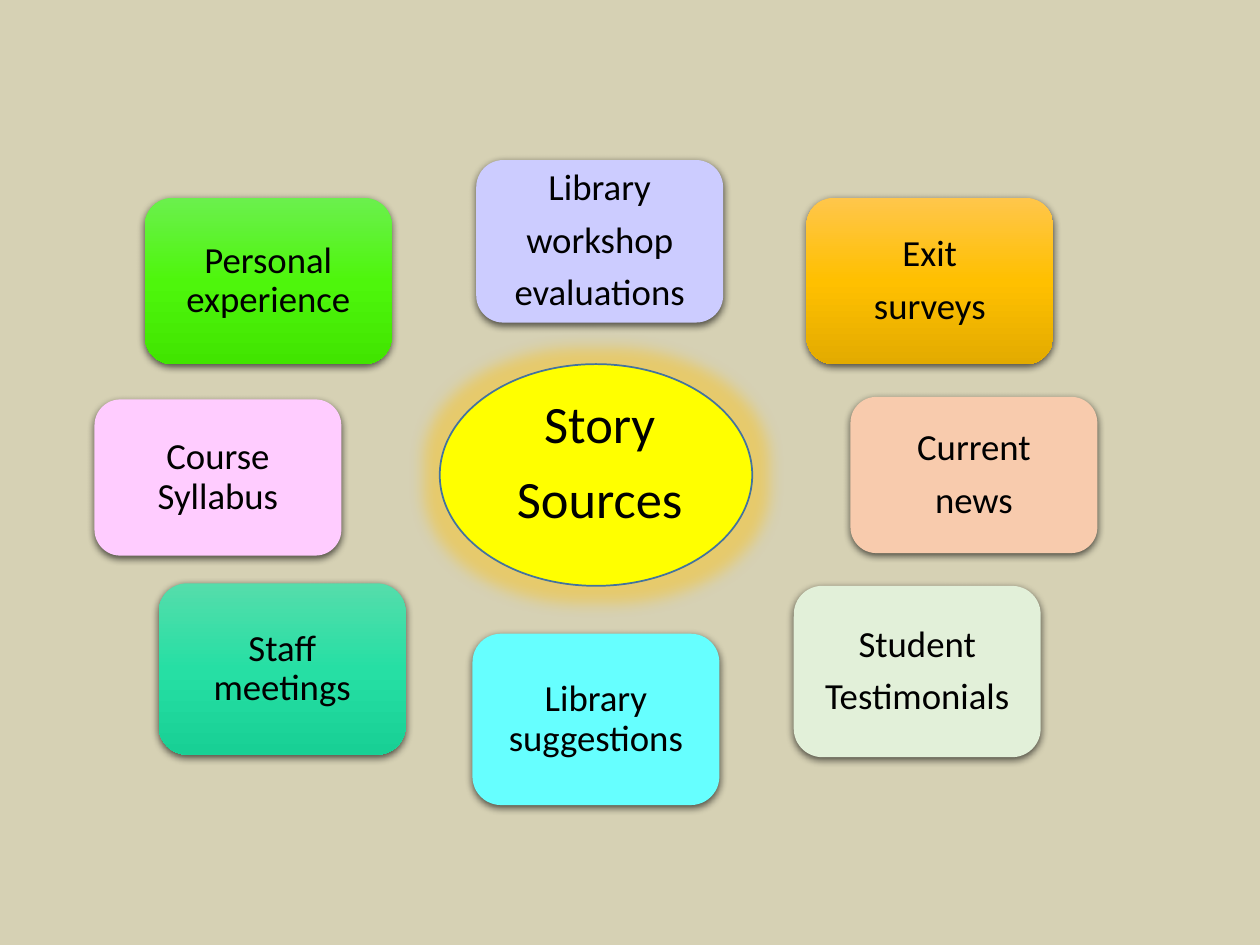
from lxml import etree
from pptx import Presentation
from pptx.dml.color import RGBColor
from pptx.enum.shapes import MSO_SHAPE
from pptx.enum.text import MSO_ANCHOR, PP_ALIGN
from pptx.oxml import parse_xml
from pptx.oxml.ns import nsdecls, qn
from pptx.util import Inches, Pt

ROUND, OVAL = MSO_SHAPE.ROUNDED_RECTANGLE, MSO_SHAPE.OVAL
MIDDLE, CENTER = MSO_ANCHOR.MIDDLE, PP_ALIGN.CENTER

SAND = RGBColor(0xD6, 0xD1, 0xB4)
BLACK = RGBColor(0, 0, 0)
YELLOW = RGBColor(0xFF, 0xFF, 0)
BLUE = RGBColor(0x43, 0x73, 0x9E)
LILAC = RGBColor(0xCC, 0xCC, 0xFF)
CYAN = RGBColor(0x66, 0xFF, 0xFF)
PEACH = RGBColor(0xF8, 0xCB, 0xAD)
PINK = RGBColor(0xFF, 0xCC, 0xFF)
PALE = RGBColor(0xE2, 0xF0, 0xD9)
# Three shades each, from top to bottom
GREEN = [RGBColor.from_string(c) for c in ("6BF04D", "4EF60C", "41E500")]
AMBER = [RGBColor.from_string(c) for c in ("FFC64B", "FFC000", "E3AB00")]
TEAL = [RGBColor.from_string(c) for c in ("55DDAB", "26DFA4", "18D095")]

SHADOW = (f'<a:outerShdw {nsdecls("a")} blurRad="57150" dist="19050" dir="5400000" '
          'algn="ctr" rotWithShape="0"><a:srgbClr val="000000">'
          '<a:alpha val="63000"/></a:srgbClr></a:outerShdw>')
GLOW = (f'<a:glow {nsdecls("a")} rad="228600"><a:srgbClr val="FFC000">'
        '<a:alpha val="40000"/></a:srgbClr></a:glow>')

BOX_W = 1.96


def add_shape(kind, left, top, width, height, color, effect):
    """Add a shape with a plain or three-shade fill and one effect."""
    shape = slide.shapes.add_shape(
        kind, Inches(left), Inches(top), Inches(width), Inches(height))
    if isinstance(color, list):
        shape.fill.gradient()
        stops = shape._element.spPr.find(qn("a:gradFill")).find(qn("a:gsLst"))
        for stop in list(stops):
            stops.remove(stop)
        for pos, shade in zip((0, 50000, 100000), color):
            stop = etree.SubElement(stops, qn("a:gs"), pos=str(pos))
            etree.SubElement(stop, qn("a:srgbClr"), val=str(shade))
        shape.fill.gradient_angle = 270
    else:
        shape.fill.solid()
        shape.fill.fore_color.rgb = color
    shape.line.fill.background()
    shape.shadow.inherit = False
    shape._element.spPr.find(qn("a:effectLst")).append(parse_xml(effect))
    return shape


def set_text(shape, text, size):
    frame = shape.text_frame
    frame.text = text
    frame.word_wrap = True
    frame.vertical_anchor = MIDDLE
    frame.margin_left = frame.margin_right = Inches(0.1)
    frame.margin_top = frame.margin_bottom = 0
    for para in frame.paragraphs:
        para.alignment = CENTER
        para.line_spacing = 0.9
        para.space_after = Pt(0.35 * size)
        for run in para.runs:
            run.font.name = "Calibri"
            run.font.size = Pt(size)
            run.font.color.rgb = BLACK


prs = Presentation()
prs.slide_width, prs.slide_height = Inches(10), Inches(7.5)
slide = prs.slides.add_slide(prs.slide_layouts[6])
slide.background.fill.solid()
slide.background.fill.fore_color.rgb = SAND

# Hub
hub = add_shape(OVAL, 3.49, 2.89, 2.48, 1.76, YELLOW, GLOW)
hub.line.color.rgb = BLUE
hub.line.width = Pt(1)
label = slide.shapes.add_textbox(
    Inches(3.89), Inches(2.91), Inches(1.74), Inches(1.54))
set_text(label, "Story\nSources", 30)

# Sources around the hub: left, top, height, fill, text
sources = [
    (1.15, 1.57, 1.32, GREEN, "Personal experience"),
    (3.78, 1.27, 1.29, LILAC, "Library\nworkshop\nevaluations"),
    (6.40, 1.57, 1.32, AMBER, "Exit\nsurveys"),
    (6.75, 3.15, 1.24, PEACH, "Current\nnews"),
    (6.30, 4.65, 1.36, PALE, "Student\nTestimonials"),
    (3.75, 5.03, 1.36, CYAN, "Library suggestions"),
    (1.26, 4.63, 1.36, TEAL, "Staff meetings"),
    (0.75, 3.17, 1.24, PINK, "Course Syllabus"),
]
for left, top, height, color, text in sources:
    box = add_shape(ROUND, left, top, BOX_W, height, color, SHADOW)
    set_text(box, text, 21)

prs.save("out.pptx")
